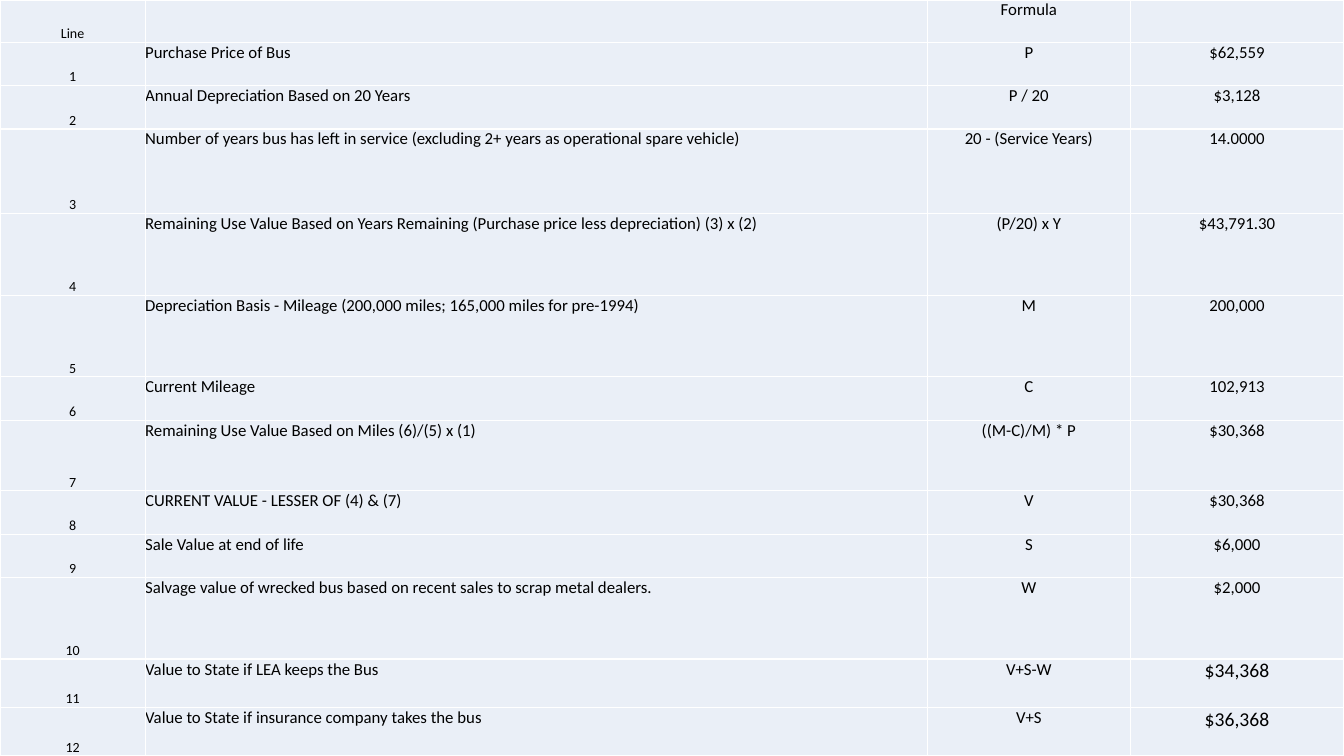
from lxml import etree
from pptx import Presentation
from pptx.dml.color import RGBColor
from pptx.enum.text import MSO_ANCHOR, PP_ALIGN
from pptx.oxml.ns import qn
from pptx.util import Inches, Pt

LEFT, CENTER = PP_ALIGN.LEFT, PP_ALIGN.CENTER
TOP, BOTTOM = MSO_ANCHOR.TOP, MSO_ANCHOR.BOTTOM

# Content: row height, description, formula, value
HEADER = ("Line", "", "Formula", "")
HEADER_HEIGHT = 0.42
LINES = [
    (0.43, "Purchase Price of Bus", "P", "$62,559"),
    (0.43, "Annual Depreciation Based on 20 Years", "P / 20", "$3,128"),
    (0.84, "Number of years bus has left in service (excluding 2+ years as operational spare vehicle)",
     "20 - (Service Years)", "14.0000"),
    (0.81, "Remaining Use Value Based on Years Remaining (Purchase price less depreciation) (3) x (2)",
     "(P/20) x Y", "$43,791.30"),
    (0.81, "Depreciation Basis - Mileage (200,000 miles; 165,000 miles for pre-1994)", "M", "200,000"),
    (0.43, "Current Mileage", "C", "102,913"),
    (0.70, "Remaining Use Value Based on Miles (6)/(5) x (1)", "((M-C)/M) * P", "$30,368"),
    (0.43, "CURRENT VALUE - LESSER OF (4) & (7)", "V", "$30,368"),
    (0.43, "Sale Value at end of life", "S", "$6,000"),
    (0.81, "Salvage value of wrecked bus based on recent sales to scrap metal dealers.", "W", "$2,000"),
    (0.48, "Value to State if LEA keeps the Bus", "V+S-W", "$34,368"),
    (0.48, "Value to State if insurance company takes the bus", "V+S", "$36,368"),
]
RESULT_LINES = (11, 12)
COLUMN_WIDTHS = (1.44, 7.76, 2.01, 2.12)
THEME = {"font": "Calibri", "ink": "000000", "fill": "EAEFF7", "border": "FFFFFF",
         "line_size": 10, "body_size": 12, "result_size": 14}


def set_text(cell, text, size, align=LEFT, anchor=TOP):
    cell.margin_left = cell.margin_right = cell.margin_top = cell.margin_bottom = 0
    cell.vertical_anchor = anchor
    p = cell.text_frame.paragraphs[0]
    p.alignment = align
    p.font.size = Pt(size)
    if text:
        r = p.add_run()
        r.text = text
        r.font.name = THEME["font"]
        r.font.size = Pt(size)
        r.font.color.rgb = RGBColor.from_string(THEME["ink"])


def style_cell(cell):
    # Borders come before the fill in the cell properties
    tcPr = cell._tc.get_or_add_tcPr()
    for side in ("a:lnL", "a:lnR", "a:lnT", "a:lnB"):
        ln = etree.SubElement(tcPr, qn(side), w=str(Pt(1)))
        solid = etree.SubElement(ln, qn("a:solidFill"))
        etree.SubElement(solid, qn("a:srgbClr"), val=THEME["border"])
    cell.fill.solid()
    cell.fill.fore_color.rgb = RGBColor.from_string(THEME["fill"])


def main():
    prs = Presentation()
    prs.slide_width, prs.slide_height = Inches(13.33), Inches(7.5)
    s = prs.slides.add_slide(prs.slide_layouts[6])

    # Table grid
    heights = [HEADER_HEIGHT] + [line[0] for line in LINES]
    rows = [HEADER] + [(str(n), *line[1:]) for n, line in enumerate(LINES, 1)]
    table = s.shapes.add_table(len(rows), len(COLUMN_WIDTHS), 0, 0,
                               prs.slide_width, prs.slide_height).table
    for column, width in zip(table.columns, COLUMN_WIDTHS):
        column.width = Inches(width)
    for row, height in zip(table.rows, heights):
        row.height = Inches(height)
    table.first_row = table.horz_banding = False

    # Cells
    for i, row in enumerate(rows):
        value_size = THEME["result_size" if i in RESULT_LINES else "body_size"]
        formats = (
            {"size": THEME["line_size"], "align": CENTER, "anchor": BOTTOM},
            {"size": THEME["body_size"]},
            {"size": THEME["body_size"], "align": CENTER},
            {"size": value_size, "align": CENTER},
        )
        for j, (text, fmt) in enumerate(zip(row, formats)):
            cell = table.cell(i, j)
            style_cell(cell)
            set_text(cell, text, **fmt)

    prs.save("out.pptx")


if __name__ == "__main__":
    main()
